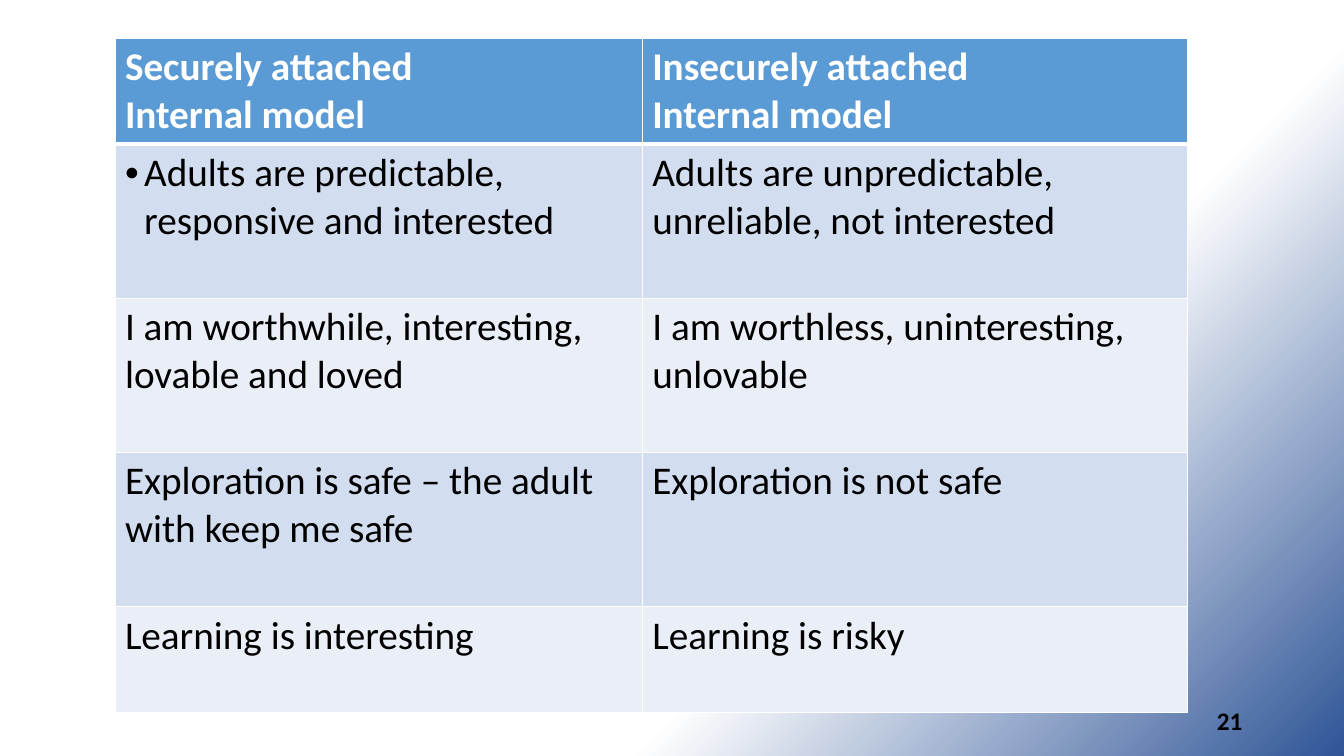
from pptx import Presentation
from pptx.dml.color import RGBColor
from pptx.enum.text import MSO_ANCHOR, PP_ALIGN
from pptx.oxml import parse_xml
from pptx.oxml.ns import nsdecls, qn
from pptx.util import Inches, Pt

COLORS = {
    "white": "FFFFFF",
    "black": "000000",
    "header": "5B9BD5",
    "band_dark": "D2DEEF",
    "band_light": "EAEFF7",
    "corner": "2F5597",
}
ROWS = [
    ("Securely attached\nInternal model", "Insecurely attached\nInternal model"),
    ("Adults are predictable, responsive and interested",
     "Adults are unpredictable, unreliable, not interested"),
    ("I am worthwhile, interesting, lovable and loved",
     "I am worthless, uninteresting, unlovable"),
    ("Exploration is safe – the adult with keep me safe", "Exploration is not safe"),
    ("Learning is interesting", "Learning is risky"),
]
COLUMN_WIDTHS = [5.23, 5.41]
ROW_HEIGHTS = [1.05, 1.53, 1.53, 1.53, 1.05]


class SlideBuilder:
    font = "Calibri"

    def __init__(self, page):
        self.page = page

    def style(self, para, size, color, bold):
        para.font.name = self.font
        para.font.size = Pt(size)
        para.font.bold = bold
        para.font.color.rgb = RGBColor.from_string(COLORS[color])

    def background(self, stops):
        """Fill the page with a gradient spreading from the top left corner."""
        self.page.background.fill.gradient()
        gradient = self.page.element.find(".//" + qn("a:gradFill"))
        stop_xml = "".join(
            f'<a:gs pos="{percent * 1000}"><a:srgbClr val="{COLORS[color]}"/></a:gs>'
            for percent, color in stops)
        gradient.getparent().replace(gradient, parse_xml(
            f'<a:gradFill {nsdecls("a")} rotWithShape="1"><a:gsLst>{stop_xml}</a:gsLst>'
            '<a:path path="circle"><a:fillToRect r="100000" b="100000"/></a:path>'
            '</a:gradFill>'))

    def borders(self, cell, widths):
        properties = cell._tc.get_or_add_tcPr()
        for side, width in zip("LRTB", widths):
            properties.append(parse_xml(
                f'<a:ln{side} {nsdecls("a")} w="{Pt(width)}"><a:solidFill>'
                f'<a:srgbClr val="{COLORS["white"]}"/></a:solidFill></a:ln{side}>'))

    def bullet(self, para, indent):
        properties = para._p.get_or_add_pPr()
        properties.set("marL", str(Inches(indent)))
        properties.set("indent", str(-Inches(indent)))
        properties.append(parse_xml(f'<a:buFont {nsdecls("a")} typeface="Arial"/>'))
        properties.append(parse_xml(f'<a:buChar {nsdecls("a")} char="•"/>'))

    def table(self, left, top, rows, widths, heights):
        frame = self.page.shapes.add_table(
            len(rows), len(widths), Inches(left), Inches(top),
            Inches(sum(widths)), Inches(sum(heights)))
        table = frame.table
        for column, width in zip(table.columns, widths):
            column.width = Inches(width)
        for index, (texts, height) in enumerate(zip(rows, heights)):
            table.rows[index].height = Inches(height)
            header = index == 0
            fill = "header" if header else "band_dark" if index % 2 else "band_light"
            for column, text in enumerate(texts):
                cell = table.cell(index, column)
                self.borders(cell, (1, 1, 3 if index == 1 else 1, 3 if header else 1))
                cell.fill.solid()
                cell.fill.fore_color.rgb = RGBColor.from_string(COLORS[fill])
                cell.text = text
                for para in cell.text_frame.paragraphs:
                    self.style(para, 28, "white" if header else "black", header)
        return table

    def page_number(self, number, left, top, width, height):
        box = self.page.shapes.add_textbox(
            Inches(left), Inches(top), Inches(width), Inches(height))
        box.text_frame.word_wrap = True
        box.text_frame.vertical_anchor = MSO_ANCHOR.MIDDLE
        para = box.text_frame.paragraphs[0]
        para.text = str(number)
        para.alignment = PP_ALIGN.RIGHT
        self.style(para, 18, "black", True)


def main():
    deck = Presentation()
    deck.slide_width, deck.slide_height = Inches(13.33), Inches(7.5)
    builder = SlideBuilder(deck.slides.add_slide(deck.slide_layouts[6]))
    builder.background([(0, "white"), (66, "white"), (100, "corner")])
    table = builder.table(1.14, 0.38, ROWS, COLUMN_WIDTHS, ROW_HEIGHTS)
    builder.bullet(table.cell(1, 0).text_frame.paragraphs[0], 0.19)
    builder.page_number(21, 9.42, 6.95, 3, 0.4)
    deck.save("out.pptx")


if __name__ == "__main__":
    main()
